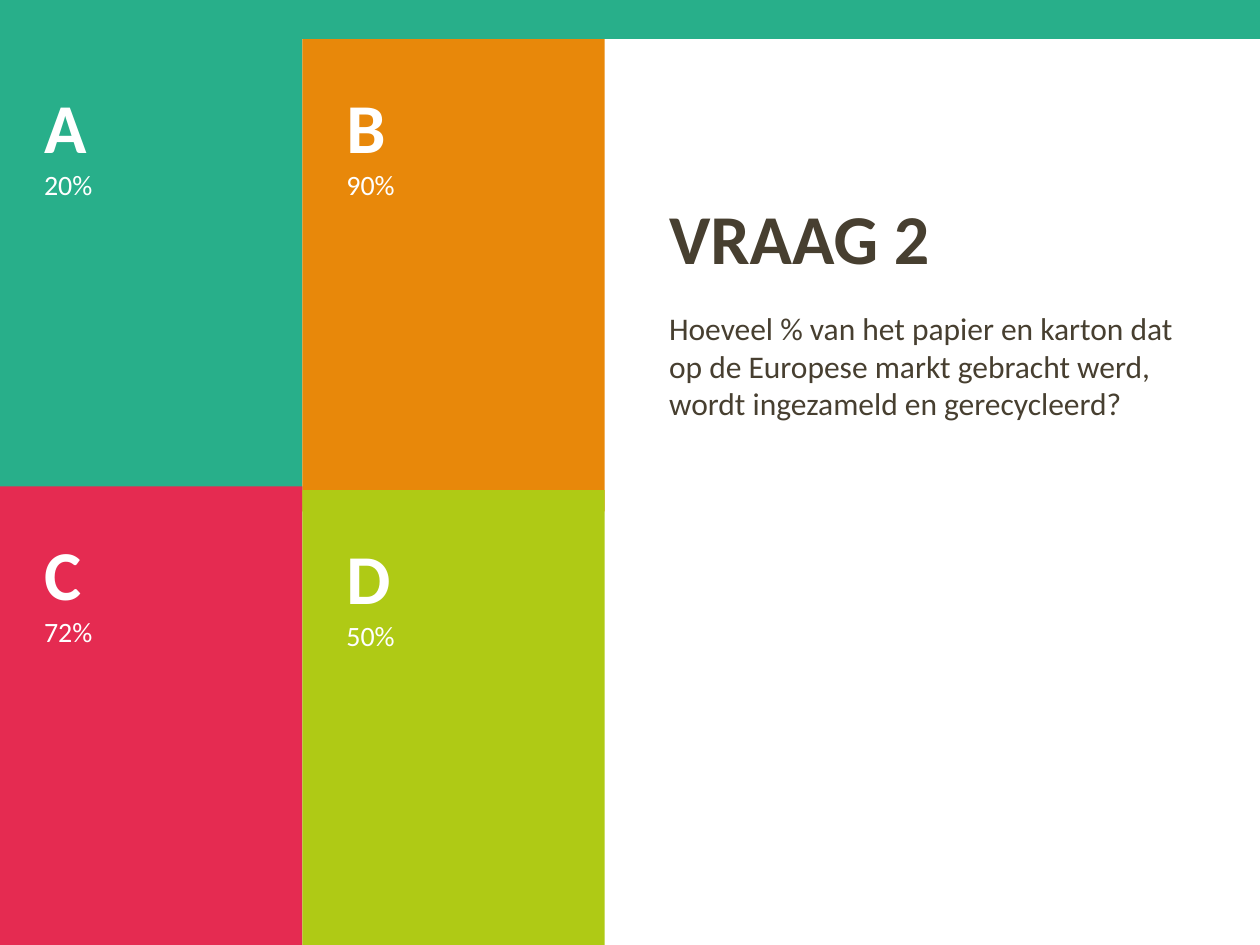
from pptx import Presentation
from pptx.dml.color import RGBColor
from pptx.enum.shapes import MSO_SHAPE
from pptx.enum.text import MSO_ANCHOR, MSO_AUTO_SIZE, PP_ALIGN
from pptx.oxml.xmlchemy import OxmlElement
from pptx.util import Inches, Pt

COLORS = {
    "green": "28AF8A",
    "orange": "E8880A",
    "red": "E52B51",
    "lime": "AFCA15",
    "ink": "473F30",
    "white": "FFFFFF",
}
FONT = "Calibri"
PAGE_WIDTH, PAGE_HEIGHT = 10, 7.5
BAND_HEIGHT = 0.31
TILE_WIDTH = 2.4

# letter, answer, fill, column, top, height
ANSWERS = [
    ("A", "20%", "green", 0, BAND_HEIGHT, 3.75),
    ("B", "90%", "orange", 1, BAND_HEIGHT, 3.75),
    ("C", "72%", "red", 0, 3.86, 3.64),
    ("D", "50%", "lime", 1, 3.89, 3.61),
]


def write_text(para, text, size, color, bold=False):
    para.alignment = PP_ALIGN.LEFT
    span = para.add_run()
    span.text = text
    span.font.name = FONT
    span.font.size = Pt(size)
    span.font.bold = bold
    span.font.color.rgb = RGBColor.from_string(COLORS[color])


def add_block(page, left, top, width, height, color):
    block = page.shapes.add_shape(
        MSO_SHAPE.RECTANGLE, Inches(left), Inches(top), Inches(width), Inches(height))
    block.shadow.inherit = False
    block.fill.solid()
    block.fill.fore_color.rgb = RGBColor.from_string(COLORS[color])
    block.line.fill.background()
    return block


def add_answer(page, left, top, width, height, letter, answer, color):
    frame = add_block(page, left, top, width, height, color).text_frame
    frame.word_wrap = True
    frame.vertical_anchor = MSO_ANCHOR.TOP
    frame.margin_left = frame.margin_right = Inches(0.35)
    frame.margin_top = frame.margin_bottom = Inches(0.35)
    write_text(frame.paragraphs[0], letter, size=40, color="white", bold=True)
    write_text(frame.add_paragraph(), answer, size=16, color="white")


def place_placeholder(holder, left, top, width, height, anchor):
    holder.left, holder.top = Inches(left), Inches(top)
    holder.width, holder.height = Inches(width), Inches(height)
    frame = holder.text_frame
    frame.word_wrap = True
    frame.auto_size = MSO_AUTO_SIZE.NONE
    frame.vertical_anchor = anchor
    return frame.paragraphs[0]


def add_question(page, left, top, width, title, question):
    heading = place_placeholder(
        page.shapes.title, left, top, width, 0.95, MSO_ANCHOR.BOTTOM)
    write_text(heading, title, size=40, color="ink", bold=True)

    para = place_placeholder(
        page.placeholders[1], left, top + 1.09, width, 2.49, MSO_ANCHOR.TOP)
    write_text(para, question, size=18, color="ink")
    # Plain paragraph: no bullet and no hanging indent
    properties = para._p.get_or_add_pPr()
    properties.set("marL", "0")
    properties.set("indent", "0")
    properties.append(OxmlElement("a:buNone"))


def main():
    deck = Presentation()
    deck.slide_width, deck.slide_height = Inches(PAGE_WIDTH), Inches(PAGE_HEIGHT)
    page = deck.slides.add_slide(deck.slide_layouts[1])

    # Question on the right
    add_question(
        page, 5.21, 1.31, 4.28, "VRAAG 2",
        "Hoeveel % van het papier en karton dat op de Europese markt "
        "gebracht werd, wordt ingezameld en gerecycleerd?")

    # Answer tiles on the left
    for letter, answer, color, column, top, height in ANSWERS:
        add_answer(page, column * TILE_WIDTH, top, TILE_WIDTH, height,
                   letter, answer, color)

    # Band along the top
    add_block(page, 0, 0, PAGE_WIDTH, BAND_HEIGHT, "green")

    deck.save("out.pptx")


if __name__ == "__main__":
    main()
